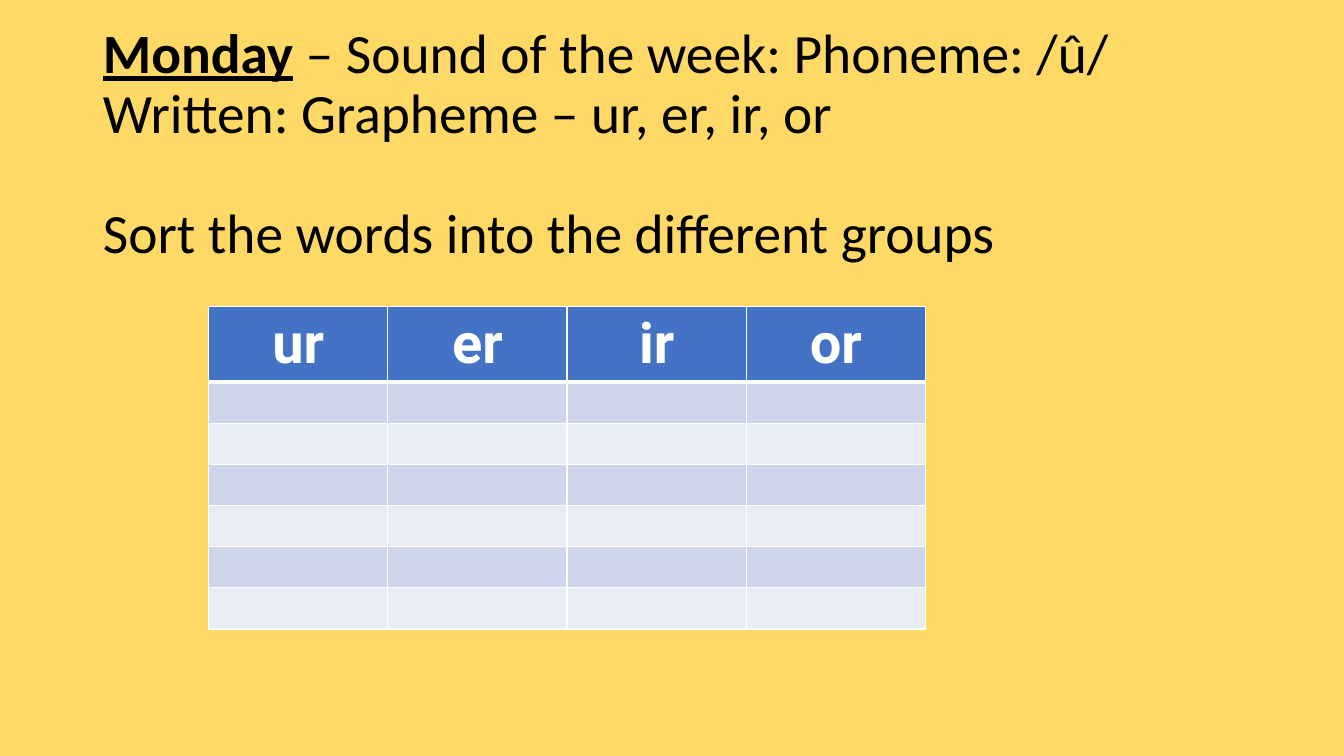
from lxml.etree import SubElement
from pptx import Presentation
from pptx.dml.color import RGBColor
from pptx.enum.text import MSO_ANCHOR, MSO_AUTO_SIZE, PP_ALIGN
from pptx.oxml.ns import qn
from pptx.util import Inches, Pt

YELLOW = RGBColor(0xFF, 0xD9, 0x66)
BLACK = RGBColor(0x00, 0x00, 0x00)
WHITE = RGBColor(0xFF, 0xFF, 0xFF)
HEADER_BLUE = RGBColor(0x44, 0x72, 0xC4)
BAND_DARK = RGBColor(0xCF, 0xD5, 0xEA)
BAND_LIGHT = RGBColor(0xE9, 0xEB, 0xF5)

GRAPHEMES = ["ur", "er", "ir", "or"]
WORD_ROWS = 6
HEADER_HEIGHT = 0.75


def add_run(paragraph, text, font_name, size, color, bold=False, underline=False):
    """Append one formatted run to a paragraph."""
    run = paragraph.add_run()
    run.text = text
    font = run.font
    font.name, font.size, font.color.rgb = font_name, Pt(size), color
    font.bold, font.underline = bold, underline


def set_borders(cell, widths):
    """Draw white cell borders with the given width in points per side."""
    properties = cell._tc.get_or_add_tcPr()
    for side, width in widths.items():
        border = SubElement(properties, qn(f"a:ln{side}"), w=str(Pt(width)))
        fill = SubElement(border, qn("a:solidFill"))
        SubElement(fill, qn("a:srgbClr"), val=str(WHITE))


def fill_title(slide, left, top, width, height):
    """Place the title with the sound of the week and the sorting task."""
    title = slide.shapes.title
    title.left, title.top = Inches(left), Inches(top)
    title.width, title.height = Inches(width), Inches(height)
    frame = title.text_frame
    frame.word_wrap = True
    frame.auto_size = MSO_AUTO_SIZE.NONE
    frame.vertical_anchor = MSO_ANCHOR.MIDDLE

    sound = frame.paragraphs[0]
    add_run(sound, "Monday", "Calibri", 39.6, BLACK, bold=True, underline=True)
    add_run(sound, " – Sound of the week: Phoneme: /û/", "Calibri", 39.6, BLACK)
    sound.add_line_break()
    add_run(sound, "Written: Grapheme – ur, er, ir, or", "Calibri", 39.6, BLACK)

    task = frame.add_paragraph()
    task.space_before = Pt(43.5)
    add_run(task, "Sort the words into the different groups", "Calibri", 39.6, BLACK)
    for paragraph in (sound, task):
        paragraph.alignment = PP_ALIGN.LEFT
        paragraph.line_spacing = 0.9


def add_sorting_table(slide, left, top, width, height):
    """Add the table with one column per grapheme and empty rows for words."""
    table = slide.shapes.add_table(
        WORD_ROWS + 1, len(GRAPHEMES),
        Inches(left), Inches(top), Inches(width), Inches(height)).table
    table.rows[0].height = Inches(HEADER_HEIGHT)
    for row_index, row in enumerate(table.rows):
        is_header = row_index == 0
        if not is_header:
            row.height = Inches((height - HEADER_HEIGHT) / WORD_ROWS)
        for cell, grapheme in zip(row.cells, GRAPHEMES):
            set_borders(cell, {"L": 1, "R": 1, "T": 3 if row_index == 1 else 1,
                               "B": 3 if is_header else 1})
            cell.fill.solid()
            if is_header:
                cell.fill.fore_color.rgb = HEADER_BLUE
                heading = cell.text_frame.paragraphs[0]
                heading.alignment = PP_ALIGN.CENTER
                add_run(heading, grapheme, "Roboto", 40, WHITE, bold=True)
            else:
                cell.fill.fore_color.rgb = BAND_DARK if row_index % 2 else BAND_LIGHT


def main():
    """Build the slide and save it."""
    presentation = Presentation()
    presentation.slide_width = Inches(13.33)
    presentation.slide_height = Inches(7.5)
    slide = presentation.slides.add_slide(presentation.slide_layouts[5])
    slide.background.fill.solid()
    slide.background.fill.fore_color.rgb = YELLOW
    fill_title(slide, 0.92, 0.72, 11.5, 1.45)
    add_sorting_table(slide, 2.07, 3.04, 7.11, 3.2)
    presentation.save("out.pptx")


if __name__ == "__main__":
    main()
